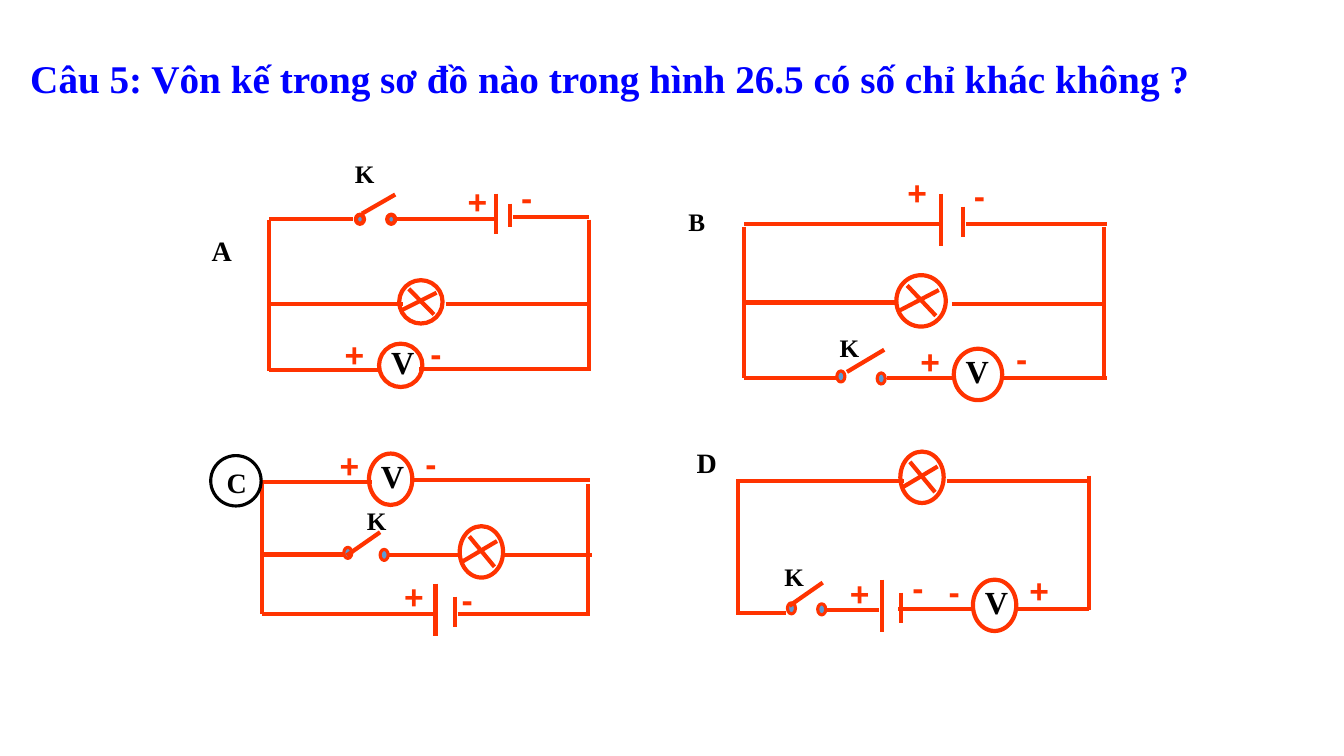
from lxml import etree
from pptx import Presentation
from pptx.dml.color import RGBColor
from pptx.enum import shapes, text
from pptx.oxml import ns
from pptx.util import Inches, Pt

BLACK = RGBColor(0x00, 0x00, 0x00)
TITLE_BLUE = RGBColor(0x00, 0x00, 0xFF)
WIRE_RED = RGBColor(0xFF, 0x33, 0x00)
CONTACT_BLUE = RGBColor(0x5B, 0x9B, 0xD5)
SERIF, SANS = "Times New Roman", "Arial"


def format_text(shape, words, size, color, font_name):
    frame = shape.text_frame
    frame.text = words
    frame.word_wrap = True
    frame.auto_size = text.MSO_AUTO_SIZE.NONE
    frame.vertical_anchor = text.MSO_ANCHOR.TOP
    paragraph = frame.paragraphs[0]
    paragraph.alignment = text.PP_ALIGN.LEFT
    font = paragraph.runs[0].font
    font.name, font.size, font.bold = font_name, Pt(size), True
    font.color.rgb = color


class Circuit:
    """A group of circuit symbols, placed in inches from the corner of a box."""

    def __init__(self, slide, left, top, width, height):
        self.shapes = slide.shapes.add_group_shape().shapes
        self.left, self.top = left, top
        self.width, self.height = width, height

    def at(self, x, y):
        return Inches(self.left + x), Inches(self.top + y)

    def wire(self, x1, y1, x2, y2):
        connector = self.shapes.add_connector(
            shapes.MSO_CONNECTOR.STRAIGHT, *self.at(x1, y1), *self.at(x2, y2))
        connector.line.color.rgb = WIRE_RED
        connector.line.width = Pt(3)
        properties = connector._element.spPr
        etree.SubElement(properties, ns.qn("a:effectLst"))

    def row(self, y, *spans):
        """Horizontal wires at one height, each from x1 to x2."""
        for x1, x2 in spans:
            self.wire(x1, y, x2, y)

    def ellipse(self, x, y, width, height, color=WIRE_RED, weight=3, fill=None):
        oval = self.shapes.add_shape(
            shapes.MSO_SHAPE.OVAL, *self.at(x, y), Inches(width), Inches(height))
        oval.shadow.inherit = False
        oval.line.color.rgb = color
        oval.line.width = Pt(weight)
        if fill is None:
            oval.fill.background()
        else:
            oval.fill.solid()
            oval.fill.fore_color.rgb = fill

    def label(self, words, x, y, size=18, color=BLACK, font_name=SERIF):
        box = self.shapes.add_textbox(*self.at(x, y), Inches(0.45), Inches(0.5))
        format_text(box, words, size, color, font_name)

    def signs(self, plus_places, minus_places):
        for sign, places in (("+", plus_places), ("-", minus_places)):
            for x, y in places:
                self.label(sign, x, y, 24, WIRE_RED, SANS)

    def lamp(self, x, y, width=0.43, height=0.51):
        self.ellipse(x, y, width, height)
        for x1, y1, x2, y2 in ((0.22, 0.2, 0.8, 0.79), (0.86, 0.29, 0.06, 0.69)):
            self.wire(x + x1 * width, y + y1 * height,
                      x + x2 * width, y + y2 * height)

    def voltmeter(self, x, y, width=0.43, height=0.51):
        self.ellipse(x, y, width, height)
        self.label("V", x + 0.02, y + height / 2 - 0.28, 23)

    def battery(self, x, top, gap=0.19, height=0.52):
        self.wire(x, top, x, top + height)
        self.wire(x + gap, top + 0.25 * height, x + gap, top + 0.83 * height)

    def switch(self, x, y, gap, blade, name_place, drop=0.02, height=0.11, weight=2.25):
        """Two contacts, an open blade (x1, y1, x2, y2) and the name K."""
        self.ellipse(x, y, 0.08, height, weight=weight, fill=CONTACT_BLUE)
        self.ellipse(x + gap, y + drop, 0.08, height, weight=weight, fill=CONTACT_BLUE)
        self.wire(*blade)
        self.label("K", *name_place)


def draw_circuit_a(slide, left, top, width, height):
    circuit = Circuit(slide, left, top, width, height)
    for x in (0, width):
        circuit.wire(x, 0.01, x, height + 0.01)
    circuit.row(0, (0, 0.83), (1.25, 2.25))
    circuit.row(-0.02, (2.42, width))
    circuit.row(0.85, (0, 1.33), (1.75, width))
    circuit.row(height, (0, 1.08))
    circuit.row(height - 0.01, (1.49, width))
    circuit.switch(0.86, -0.04, 0.31, (0.92, -0.05, 1.25, -0.24), (0.75, -0.65),
                   drop=0, height=0.09, weight=3)
    circuit.battery(2.25, -0.25, 0.14, 0.4)
    circuit.lamp(1.29, 0.61, height=0.43)
    circuit.voltmeter(1.09, 1.24, height=0.43)
    circuit.signs([(1.87, -0.42), (0.65, 1.09)], [(2.4, -0.46), (1.5, 1.08)])
    circuit.label("A", -0.67, 0.1, 20)


def draw_circuit_b(slide, left, top, width, height):
    circuit = Circuit(slide, left, top, width, height)
    for x in (0, width):
        circuit.wire(x, 0.03, x, height)
    circuit.row(0, (0, 1.95), (2.2, width + 0.03))
    circuit.row(0.78, (0, 1.51))
    circuit.row(0.8, (2.06, width))
    circuit.row(height, (0, 0.95), (1.42, 2.08), (2.56, width + 0.03))
    circuit.battery(1.95, -0.3, 0.22)
    circuit.lamp(1.51, 0.51, 0.49)
    circuit.switch(0.92, 1.46, 0.4, (1.02, 1.47, 1.39, 1.25), (0.85, 1.03))
    circuit.voltmeter(2.08, 1.24, 0.48)
    circuit.signs([(1.52, -0.56), (1.65, 1.11)], [(2.18, -0.53), (2.6, 1.08)])
    circuit.label("B", -0.65, -0.22)


def draw_circuit_c(slide, left, top, width, height):
    circuit = Circuit(slide, left, top, width, height)
    circuit.wire(0, -0.02, 0, height)
    circuit.wire(width, 0.02, width, height)
    circuit.row(0, (0, 1.09))
    circuit.row(-0.02, (1.5, width + 0.02))
    circuit.row(0.72, (0, 0.84))
    circuit.row(0.73, (1.19, 1.94), (2.41, width + 0.04))
    circuit.row(height, (0, 1.72), (1.94, width + 0.02))
    circuit.voltmeter(1.06, -0.28)
    circuit.switch(0.81, 0.65, 0.36, (0.84, 0.73, 1.17, 0.5), (0.94, 0.18))
    circuit.lamp(1.96, 0.44)
    circuit.battery(1.72, 1.01)
    circuit.signs([(0.67, -0.42), (1.31, 0.88)], [(1.52, -0.44), (1.88, 0.91)])
    circuit.label("C", -0.45, -0.21, 20)
    circuit.ellipse(-0.51, -0.26, 0.5, 0.5, BLACK, 2.25)


def draw_circuit_d(slide, left, top, width, height):
    circuit = Circuit(slide, left, top, width, height)
    circuit.wire(0, 0, 0, height + 0.05)
    circuit.wire(width, -0.05, width, height)
    circuit.row(0, (-0.02, 1.65), (2.07, width))
    circuit.row(height + 0.03, (-0.02, 0.48))
    circuit.row(height, (0.82, 1.4))
    circuit.row(height - 0.01, (1.59, 2.35), (2.75, width))
    circuit.lamp(1.61, -0.29)
    circuit.switch(0.49, 1.21, 0.3, (0.51, 1.24, 0.84, 1.01), (0.36, 0.75), drop=0.01)
    circuit.battery(1.43, 0.98)
    circuit.voltmeter(2.33, 0.98)
    circuit.signs([(1.01, 0.86), (2.79, 0.83)], [(1.63, 0.81), (1.99, 0.84)])
    circuit.label("D", -0.51, -0.4, 20)


def set_title(slide, left, top, width, height):
    title = slide.shapes.title
    title.left, title.top = Inches(left), Inches(top)
    title.width, title.height = Inches(width), Inches(height)
    format_text(title, "Câu 5: Vôn kế trong sơ đồ nào trong hình 26.5 có số chỉ khác không ?",
                28, TITLE_BLUE, SERIF)


def main():
    presentation = Presentation()
    presentation.slide_width, presentation.slide_height = Inches(13.33), Inches(7.5)
    slide = presentation.slides.add_slide(presentation.slide_layouts[5])
    set_title(slide, 0.2, 0.49, 13.03, 0.57)
    draw_circuit_a(slide, 2.67, 2.17, 3.17, 1.5)
    draw_circuit_b(slide, 7.38, 2.22, 3.57, 1.53)
    draw_circuit_c(slide, 2.6, 4.78, 3.23, 1.31)
    draw_circuit_d(slide, 7.32, 4.77, 3.48, 1.28)
    presentation.save("out.pptx")


if __name__ == "__main__":
    main()
